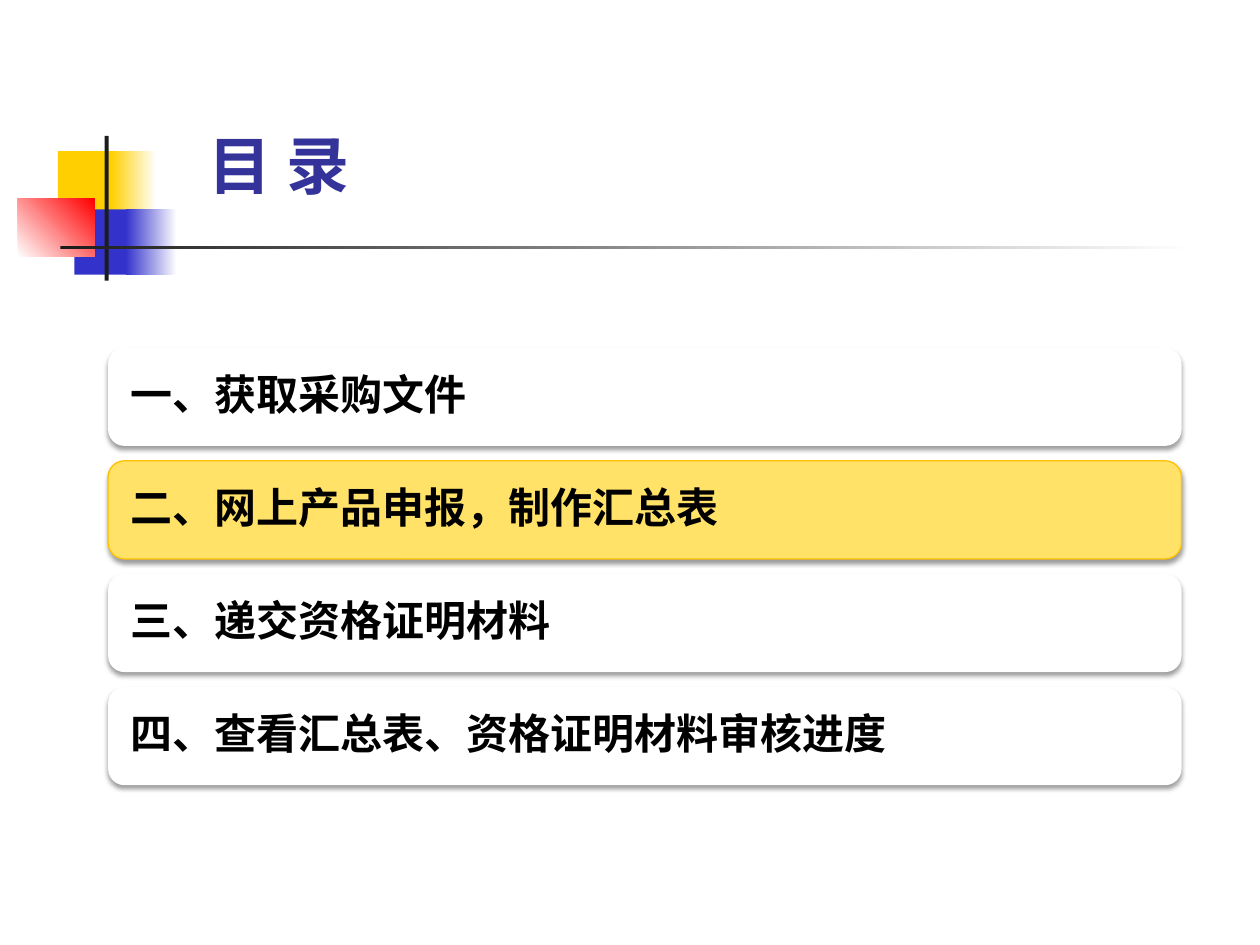
from lxml import etree
from pptx import Presentation
from pptx import util as u
from pptx.dml.color import RGBColor
from pptx.enum import shapes, text
from pptx.oxml import parse_xml
from pptx.oxml.ns import nsdecls, qn

CJK = "Noto Sans CJK SC"
SHADOW = (
    f'<a:effectLst {nsdecls("a")}><a:outerShdw blurRad="39370" dist="20320" dir="5400000" rotWithShape="0">'
    '<a:srgbClr val="000000"><a:alpha val="38000"/></a:srgbClr></a:outerShdw></a:effectLst>'
)


def rgb(value):
    """Turn a hex string into a colour."""
    return RGBColor.from_string(value)


def add_shape(s, kind, box, fill, line=None):
    """Add a preset shape with a plain fill and an optional outline."""
    sp = s.shapes.add_shape(kind, *map(u.Cm, box))
    sp.shadow.inherit = False
    sp.fill.solid()
    sp.fill.fore_color.rgb = rgb(fill)
    if line:
        sp.line.color.rgb = rgb(line)
        sp.line.width = u.Pt(0.75)
    else:
        sp.line.fill.background()
    return sp


def add_block(s, box, start, end=None, angle=0):
    """Add a decorative rectangle, fading from start to end if end is given."""
    sp = add_shape(s, shapes.MSO_SHAPE.RECTANGLE, box, start)
    if end:
        sp.fill.gradient()
        sp.fill.gradient_angle = angle
        for stop, color, position in zip(sp.fill.gradient_stops, (start, end), (0, 1)):
            stop.color.rgb = rgb(color)
            stop.position = position


def write_text(sp, content, size, color, font):
    """Put one bold left-aligned line into a shape, centred vertically."""
    tf = sp.text_frame
    tf.word_wrap = True
    tf.vertical_anchor = text.MSO_ANCHOR.MIDDLE
    p = tf.paragraphs[0]
    p.text = content
    p.alignment = text.PP_ALIGN.LEFT
    p.font.size = u.Pt(size)
    p.font.bold = True
    p.font.color.rgb = rgb(color)
    p.font.name = font
    etree.SubElement(p._p.pPr.find(qn("a:defRPr")), qn("a:ea"), typeface=CJK)
    return p


def add_title(s, content):
    """Add the slide heading."""
    sp = s.shapes.add_textbox(*map(u.Cm, (3.96, 1.73, 20.24, 3.18)))
    write_text(sp, content, 36, "333399", CJK)


def add_entry(s, top, content, fill, line=None):
    """Add one rounded agenda bar with a soft shadow."""
    sp = add_shape(s, shapes.MSO_SHAPE.ROUNDED_RECTANGLE, (2.18, top, 21.64, 1.98), fill, line)
    effects = sp._element.spPr.find(qn("a:effectLst"))
    effects.getparent().replace(effects, parse_xml(SHADOW))
    p = write_text(sp, content, 24, "000000", "Roboto")
    p.line_spacing = 0.9
    sp.text_frame.margin_left = u.Cm(0.36)


def main():
    """Build the agenda slide."""
    prs = Presentation()
    prs.slide_width, prs.slide_height = u.Cm(25.4), u.Cm(19.05)
    s = prs.slides.add_slide(prs.slide_layouts[6])

    add_block(s, (1.17, 3.05, 1.22, 1.32), "FFCF01")
    add_block(s, (2.24, 3.05, 0.91, 1.32), "FFCF01", "FFFFFF")
    add_block(s, (1.5, 4.22, 1.17, 1.32), "3333CC")
    add_block(s, (2.54, 4.22, 1.02, 1.32), "3333CC", "FFFFFF")
    add_block(s, (0.36, 4.01, 1.55, 1.17), "FFFFFF", "FF0000", 45)
    add_block(s, (2.11, 2.74, 0.08, 2.92), "1C1C1C")
    add_block(s, (1.22, 4.95, 22.86, 0.08), "1C1C1C", "FFFFFF")
    add_title(s, "目 录")

    entries = [
        ("一、获取采购文件", "FFFFFF"),
        ("二、网上产品申报，制作汇总表", "FFE267", "FFC000"),
        ("三、递交资格证明材料", "FFFFFF"),
        ("四、查看汇总表、资格证明材料审核进度", "FFFFFF"),
    ]
    for i, entry in enumerate(entries):
        add_entry(s, 7.01 + 2.28 * i, *entry)

    prs.save("out.pptx")


if __name__ == "__main__":
    main()
